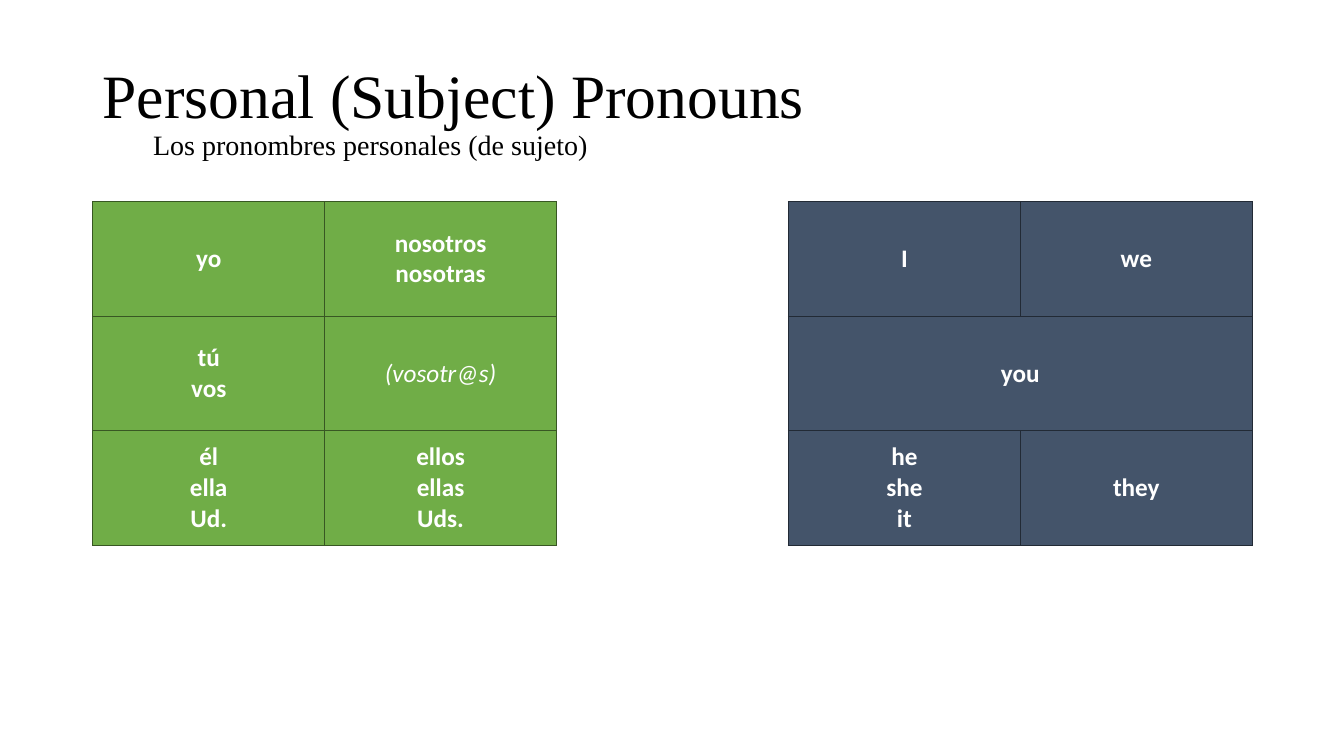
from dataclasses import dataclass

from lxml.etree import SubElement
from pptx import Presentation
from pptx.dml.color import RGBColor
from pptx.enum.text import MSO_ANCHOR, PP_ALIGN
from pptx.oxml.ns import qn
from pptx.util import Inches, Pt


@dataclass(frozen=True)
class Theme:
    green: str = "70AD47"
    moss: str = "385723"
    slate: str = "44546A"
    night: str = "222A35"
    white: str = "FFFFFF"
    black: str = "000000"
    serif: str = "Times New Roman"
    sans: str = "Calibri"
    head: int = 44
    sub: int = 20
    body: int = 18


class Deck:
    """Holds the theme and the current slide, and draws each kind of element."""

    def __init__(self, theme):
        self.theme = theme
        self.show = Presentation()
        self.show.slide_width = Inches(13.33)
        self.show.slide_height = Inches(7.5)
        self.slide = self.show.slides.add_slide(self.show.slide_layouts[6])

    def style(self, run, face, size, color, bold=False, slant=False):
        font = run.font
        font.name, font.size = face, Pt(size)
        font.bold, font.italic = bold, slant
        font.color.rgb = RGBColor.from_string(color)

    def title(self, main, sub, left, top, width, height):
        box = self.slide.shapes.add_textbox(
            Inches(left), Inches(top), Inches(width), Inches(height))
        frame = box.text_frame
        frame.word_wrap = True
        frame.vertical_anchor = MSO_ANCHOR.MIDDLE
        para = frame.paragraphs[0]
        para.text = f"{main}\v\t{sub}"
        para.line_spacing = 0.9
        for run, size in zip(para.runs, (self.theme.head, self.theme.sub)):
            self.style(run, self.theme.serif, size, self.theme.black)

    def edge(self, cell, sides):
        props = cell._tc.get_or_add_tcPr()
        for side, color in sides.items():
            line = SubElement(props, qn(f"a:ln{side}"), w=str(Pt(1)))
            if color:
                fill = SubElement(line, qn("a:solidFill"))
                SubElement(fill, qn("a:srgbClr"), val=color)
            else:
                SubElement(line, qn("a:noFill"))

    def cell(self, cell, text, fill, line):
        self.edge(cell, dict.fromkeys("LRTB", line))
        cell.fill.solid()
        cell.fill.fore_color.rgb = RGBColor.from_string(fill)
        cell.vertical_anchor = MSO_ANCHOR.MIDDLE
        cell.text_frame.text = text
        slant = text.startswith("(")
        for para in cell.text_frame.paragraphs:
            para.alignment = PP_ALIGN.CENTER
            for run in para.runs:
                self.style(run, self.theme.sans, self.theme.body,
                           self.theme.white, not slant, slant)

    def gap(self, cell, left, right):
        self.edge(cell, {"L": left, "R": right, "T": None, "B": None})
        cell.fill.background()

    def table(self, rows, left, top, width, height):
        theme = self.theme
        count = len(rows[0])
        mid = count // 2
        grid = self.slide.shapes.add_table(
            len(rows), count, Inches(left), Inches(top),
            Inches(width), Inches(height)).table
        grid.first_row = grid.horz_banding = False
        for y, row in enumerate(rows):
            for x, text in enumerate(row):
                cell = grid.cell(y, x)
                if x == mid:
                    self.gap(cell, theme.moss, theme.night)
                elif x < mid:
                    self.cell(cell, text, theme.green, theme.moss)
                else:
                    self.cell(cell, text, theme.slate, theme.night)
        return grid


def main():
    deck = Deck(Theme())
    deck.title("Personal (Subject) Pronouns",
               "Los pronombres personales (de sujeto)", 0.92, 0.4, 11.5, 1.45)
    rows = [
        ("yo", "nosotros\nnosotras", "", "I", "we"),
        ("tú\nvos", "(vosotr@s)", "", "you", ""),
        ("él\nella\nUd.", "ellos\nellas\nUds.", "", "he\nshe\nit", "they"),
    ]
    grid = deck.table(rows, 0.92, 2, 11.5, 3.41)
    grid.cell(1, 3).merge(grid.cell(1, 4))
    deck.show.save("out.pptx")


if __name__ == "__main__":
    main()
